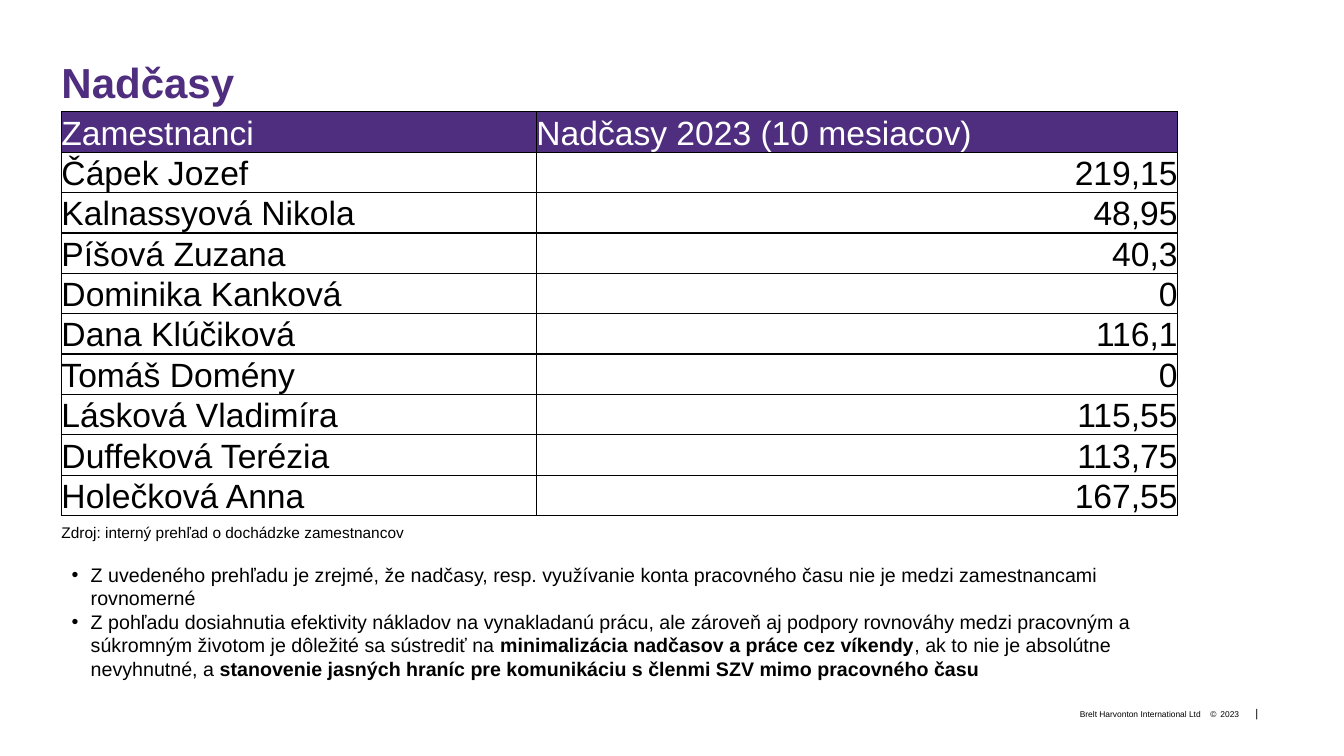
from dataclasses import dataclass

from lxml.etree import SubElement
from pptx import Presentation
from pptx.dml.color import RGBColor
from pptx.enum.text import MSO_ANCHOR as Anchor, MSO_AUTO_SIZE as AutoSize, PP_ALIGN as Align
from pptx.oxml import parse_xml
from pptx.oxml.ns import nsdecls, qn
from pptx.util import Inches, Pt


@dataclass(frozen=True)
class Theme:
    font: str = "Arial"
    purple: RGBColor = RGBColor(0x4F, 0x2D, 0x7F)
    black: RGBColor = RGBColor(0, 0, 0)
    white: RGBColor = RGBColor(255, 255, 255)
    title: int = 30
    table: int = 24
    body: int = 14
    source: int = 11
    mark: int = 8
    footer: int = 6


THEME = Theme()
LEFT = 0.61
ROW_HEIGHT = 0.38
COLUMN_WIDTHS = (4.71, 6.36)

HEADINGS = ("Zamestnanci", "Nadčasy 2023 (10 mesiacov)")
OVERTIME = [
    ("Čápek Jozef", "219,15"),
    ("Kalnassyová Nikola", "48,95"),
    ("Píšová Zuzana", "40,3"),
    ("Dominika Kanková", "0"),
    ("Dana Klúčiková", "116,1"),
    ("Tomáš Domény", "0"),
    ("Lásková Vladimíra", "115,55"),
    ("Duffeková Terézia", "113,75"),
    ("Holečková Anna", "167,55"),
]
FINDINGS = [
    [("Z uvedeného prehľadu je zrejmé, že nadčasy, resp. využívanie konta pracovného času "
      "nie je medzi zamestnancami rovnomerné", False)],
    [("Z pohľadu dosiahnutia efektivity nákladov na vynakladanú prácu, ale zároveň aj podpory "
      "rovnováhy medzi pracovným a súkromným životom je dôležité sa sústrediť na ", False),
     ("minimalizácia nadčasov a práce cez víkendy", True),
     (", ak to nie je absolútne nevyhnutné, a ", False),
     ("stanovenie jasných hraníc pre komunikáciu s členmi SZV mimo pracovného času", True)],
]


def place(shape, left, top, width, height):
    shape.left, shape.top = Inches(left), Inches(top)
    shape.width, shape.height = Inches(width), Inches(height)


def clear_margins(holder):
    holder.margin_left = holder.margin_right = 0
    holder.margin_top = holder.margin_bottom = 0


def add_run(paragraph, text, size, color=THEME.black, bold=False):
    run = paragraph.add_run()
    run.text = text
    run.font.name = THEME.font
    run.font.size = Pt(size)
    run.font.bold = bold
    run.font.color.rgb = color


def add_bullet(paragraph, mark, indent):
    properties = paragraph._p.get_or_add_pPr()
    properties.set("marL", str(Inches(indent)))
    properties.set("indent", str(-Inches(indent)))
    SubElement(properties, qn("a:buFont")).set("typeface", THEME.font)
    SubElement(properties, qn("a:buChar")).set("char", mark)


def add_title(slide, text):
    title = slide.shapes.title
    place(title, LEFT, 0.56, 12.11, 0.5)
    frame = title.text_frame
    clear_margins(frame)
    frame.auto_size = AutoSize.NONE
    frame.vertical_anchor = Anchor.TOP
    heading = frame.paragraphs[0]
    heading.alignment = Align.LEFT
    heading.line_spacing = Pt(36)
    add_run(heading, text, THEME.title, THEME.purple, True)


def add_findings(slide):
    body = slide.placeholders[1]
    place(body, LEFT, 5.53, 11.31, 1.51)
    frame = body.text_frame
    frame.auto_size = AutoSize.NONE
    for index, parts in enumerate(FINDINGS):
        finding = frame.add_paragraph() if index else frame.paragraphs[0]
        finding.line_spacing = Pt(16.8)
        finding.space_before = Pt(0)
        add_bullet(finding, "•", 0.19)
        for text, bold in parts:
            add_run(finding, text, THEME.body, bold=bold)


def add_label(slide, text, box, size, align=Align.LEFT, anchor=Anchor.BOTTOM, mark=None):
    label = slide.shapes.add_textbox(*map(Inches, box))
    frame = label.text_frame
    clear_margins(frame)
    frame.word_wrap = False
    frame.vertical_anchor = anchor
    line = frame.paragraphs[0]
    line.alignment = align
    if mark:
        add_bullet(line, mark, 0.1)
    add_run(line, text, size)


def add_borders(cell):
    properties = cell._tc.get_or_add_tcPr()
    for position, side in enumerate("LRTB"):
        border = parse_xml(
            f'<a:ln{side} {nsdecls("a")} w="{Pt(1)}"><a:solidFill>'
            f'<a:srgbClr val="{THEME.black}"/></a:solidFill></a:ln{side}>')
        properties.insert(position, border)


def fill_cell(cell, text, is_heading, align):
    clear_margins(cell)
    cell.vertical_anchor = Anchor.BOTTOM
    if is_heading:
        cell.fill.solid()
        cell.fill.fore_color.rgb = THEME.purple
    else:
        cell.fill.background()
    add_borders(cell)
    line = cell.text_frame.paragraphs[0]
    line.alignment = align
    add_run(line, text, THEME.table, THEME.white if is_heading else THEME.black)


def add_overtime_table(slide):
    rows = [HEADINGS, *OVERTIME]
    table = slide.shapes.add_table(
        len(rows), len(HEADINGS), Inches(LEFT), Inches(1.11),
        Inches(sum(COLUMN_WIDTHS)), Inches(ROW_HEIGHT * len(rows))).table
    table.first_row = table.horz_banding = False
    for column, width in zip(table.columns, COLUMN_WIDTHS):
        column.width = Inches(width)
    for row_index, row in enumerate(rows):
        table.rows[row_index].height = Inches(ROW_HEIGHT)
        for column_index, text in enumerate(row):
            align = Align.RIGHT if row_index and column_index else Align.LEFT
            fill_cell(table.cell(row_index, column_index), text, row_index == 0, align)


def add_footer(slide):
    add_label(slide, "|", (12.45, 7.01, 0.03, 0.13), THEME.mark, Align.RIGHT)
    add_label(slide, "2023", (12, 6.98, 0.29, 0.16), THEME.footer, Align.RIGHT, mark="©")
    add_label(slide, "Brelt Harvonton International Ltd", (8.61, 6.98, 3.3, 0.16),
              THEME.footer, Align.RIGHT)


def main():
    deck = Presentation()
    deck.slide_width, deck.slide_height = Inches(13.33), Inches(7.5)
    slide = deck.slides.add_slide(deck.slide_layouts[1])
    add_footer(slide)
    add_title(slide, "Nadčasy")
    add_overtime_table(slide)
    add_findings(slide)
    add_label(slide, "Zdroj: interný prehľad o dochádzke zamestnancov",
              (LEFT, 5.19, 3.77, 0.26), THEME.source, anchor=Anchor.TOP)
    deck.save("out.pptx")


if __name__ == "__main__":
    main()
